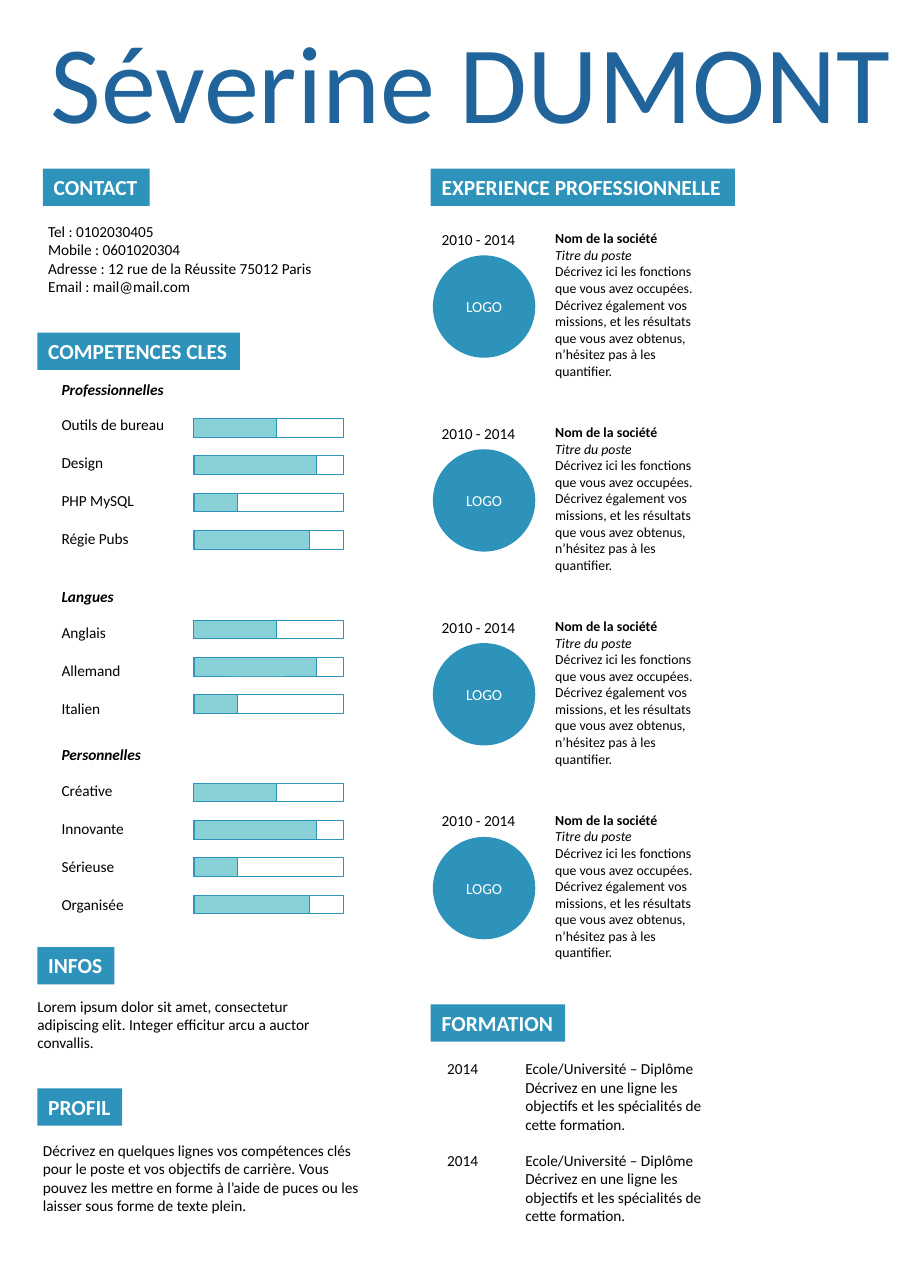
from pptx import Presentation
from pptx.dml.color import RGBColor
from pptx.enum.shapes import MSO_SHAPE
from pptx.enum.text import MSO_ANCHOR, MSO_AUTO_SIZE, PP_ALIGN
from pptx.util import Cm, Pt

RECTANGLE, OVAL = MSO_SHAPE.RECTANGLE, MSO_SHAPE.OVAL
TOP, MIDDLE = MSO_ANCHOR.TOP, MSO_ANCHOR.MIDDLE
LEFT, CENTER = PP_ALIGN.LEFT, PP_ALIGN.CENTER
GROW = MSO_AUTO_SIZE.SHAPE_TO_FIT_TEXT

NAVY = RGBColor(0x21, 0x64, 0x9B)
BLUE = RGBColor(0x2D, 0x93, 0xBB)
AQUA = RGBColor(0x88, 0xD1, 0xD7)
WHITE = RGBColor(0xFF, 0xFF, 0xFF)
BLACK = RGBColor(0, 0, 0)
FONT = "Calibri"

NAME = "Séverine DUMONT"
HEADINGS = [
    ("CONTACT", 0.99, 3.89, 2.46),
    ("COMPETENCES CLES", 0.86, 7.67, 4.67),
    ("INFOS", 0.86, 21.84, 1.78),
    ("PROFIL", 0.86, 25.1, 1.96),
    ("EXPERIENCE PROFESSIONNELLE", 9.93, 3.89, 7.01),
    ("FORMATION", 9.93, 23.16, 3.1),
]
PASSAGES = [
    (["Tel : 0102030405", "Mobile : 0601020304",
      "Adresse : 12 rue de la Réussite 75012 Paris", "Email : mail@mail.com"],
     0.86, 5.0, 7.65, 1.96),
    (["Lorem ipsum dolor sit amet, consectetur adipiscing elit. "
      "Integer efficitur arcu a auctor convallis."],
     0.61, 22.86, 7.34, 1.55),
    (["Décrivez en quelques lignes vos compétences clés pour le poste et vos "
      "objectifs de carrière. Vous pouvez les mettre en forme à l’aide de puces "
      "ou les laisser sous forme de texte plein."],
     0.74, 26.19, 7.95, 1.96),
]
SKILLS = [
    ("Professionnelles", 8.64, 9.45, 9.65,
     [("Outils de bureau", 0.55), ("Design", 0.82), ("PHP MySQL", 0.29), ("Régie Pubs", 0.77)]),
    ("Langues", 13.41, 14.25, 14.3,
     [("Anglais", 0.55), ("Allemand", 0.82), ("Italien", 0.29)]),
    ("Personnelles", 17.07, 17.88, 18.06,
     [("Créative", 0.55), ("Innovante", 0.82), ("Sérieuse", 0.29), ("Organisée", 0.77)]),
]
JOB = ("2010 - 2014", "LOGO", [
    "Nom de la société", "Titre du poste",
    "Décrivez ici les fonctions que vous avez occupées. Décrivez également vos "
    "missions, et les résultats que vous avez obtenus, n’hésitez pas à les quantifier."])
JOBS = [JOB] * 4
DEGREE = ("2014", [
    "Ecole/Université – Diplôme",
    "Décrivez en une ligne les objectifs et les spécialités de cette formation."])
DEGREES = [DEGREE] * 2

LINE_HEIGHT = 0.69
SKILL_LEFT, LABEL_PITCH = 1.17, 0.88
BAR_LEFT, BAR_WIDTH, BAR_HEIGHT, BAR_PITCH = 4.47, 3.45, 0.43, 0.86
JOB_TOP, JOB_PITCH = 5.18, 4.47
DEGREE_TOP, DEGREE_PITCH = 24.31, 2.11


def write(shape, lines, size, color=BLACK, bold=False, italic=False, align=LEFT):
    frame = shape.text_frame
    frame.text = "\n".join(lines)
    for paragraph in frame.paragraphs:
        paragraph.alignment = align
        font = paragraph.font
        font.name, font.size, font.color.rgb = FONT, Pt(size), color
        font.bold, font.italic = bold, italic
    return frame


def add_text(lines, left, top, width, height, size=10, **style):
    box = slide.shapes.add_textbox(Cm(left), Cm(top), Cm(width), Cm(height))
    frame = write(box, lines, size, **style)
    frame.word_wrap = True
    frame.auto_size = GROW
    return frame


def add_block(shapes, kind, left, top, width, height, fill=None, outline=None):
    block = shapes.add_shape(kind, Cm(left), Cm(top), Cm(width), Cm(height))
    block.shadow.inherit = False
    if fill is None:
        block.fill.background()
    else:
        block.fill.solid()
        block.fill.fore_color.rgb = fill
    if outline is None:
        block.line.fill.background()
    else:
        block.line.color.rgb = outline
        block.line.width = Pt(0.5)
    return block


def add_heading(caption, left, top, width):
    banner = add_block(slide.shapes, RECTANGLE, left, top, width, 0.86, BLUE)
    frame = write(banner, [caption], 14, WHITE, bold=True)
    frame.vertical_anchor = TOP
    frame.word_wrap = False
    frame.auto_size = GROW


def add_skill_bar(top, level):
    gauge = slide.shapes.add_group_shape().shapes
    add_block(gauge, RECTANGLE, BAR_LEFT, top, BAR_WIDTH, BAR_HEIGHT, outline=BLUE)
    add_block(gauge, RECTANGLE, BAR_LEFT, top, BAR_WIDTH * level, BAR_HEIGHT, AQUA, BLUE)


def add_job(top, dates, logo, description):
    add_text([dates], 9.93, top, 2.87, LINE_HEIGHT)
    details = add_text(description, 12.55, top, 3.89, 3.71, size=9)
    details.paragraphs[0].font.bold = True
    details.paragraphs[1].font.italic = True
    disc = add_block(slide.shapes, OVAL, 9.98, top + 0.71, 2.36, 2.36, BLUE)
    frame = write(disc, [logo], 10, WHITE, align=CENTER)
    frame.vertical_anchor = MIDDLE
    frame.margin_left = frame.margin_right = frame.margin_top = frame.margin_bottom = 0


prs = Presentation()
prs.slide_width, prs.slide_height = Cm(21), Cm(29.7)
slide = prs.slides.add_slide(prs.slide_layouts[5])

title = slide.shapes.title
title.left, title.top, title.width, title.height = Cm(0.91), Cm(0.18), Cm(20.07), Cm(3.33)
title_frame = write(title, [NAME], 72, NAVY)
title_frame.vertical_anchor = TOP
title_frame.word_wrap = False
title_frame.auto_size = GROW

for heading in HEADINGS:
    add_heading(*heading)

for passage in PASSAGES:
    add_text(*passage)

for family, family_top, labels_top, bars_top, skills in SKILLS:
    add_text([family], SKILL_LEFT, family_top, 7.57, LINE_HEIGHT, bold=True, italic=True)
    for row, (skill, level) in enumerate(skills):
        add_text([skill], SKILL_LEFT, labels_top + row * LABEL_PITCH, 3.43, LINE_HEIGHT)
        add_skill_bar(bars_top + row * BAR_PITCH, level)

for row, job in enumerate(JOBS):
    add_job(JOB_TOP + row * JOB_PITCH, *job)

for row, (year, diploma) in enumerate(DEGREES):
    degree_top = DEGREE_TOP + row * DEGREE_PITCH
    add_text([year], 10.06, degree_top, 1.8, LINE_HEIGHT)
    add_text(diploma, 11.86, degree_top, 5.13, 1.96)

prs.save("out.pptx")
